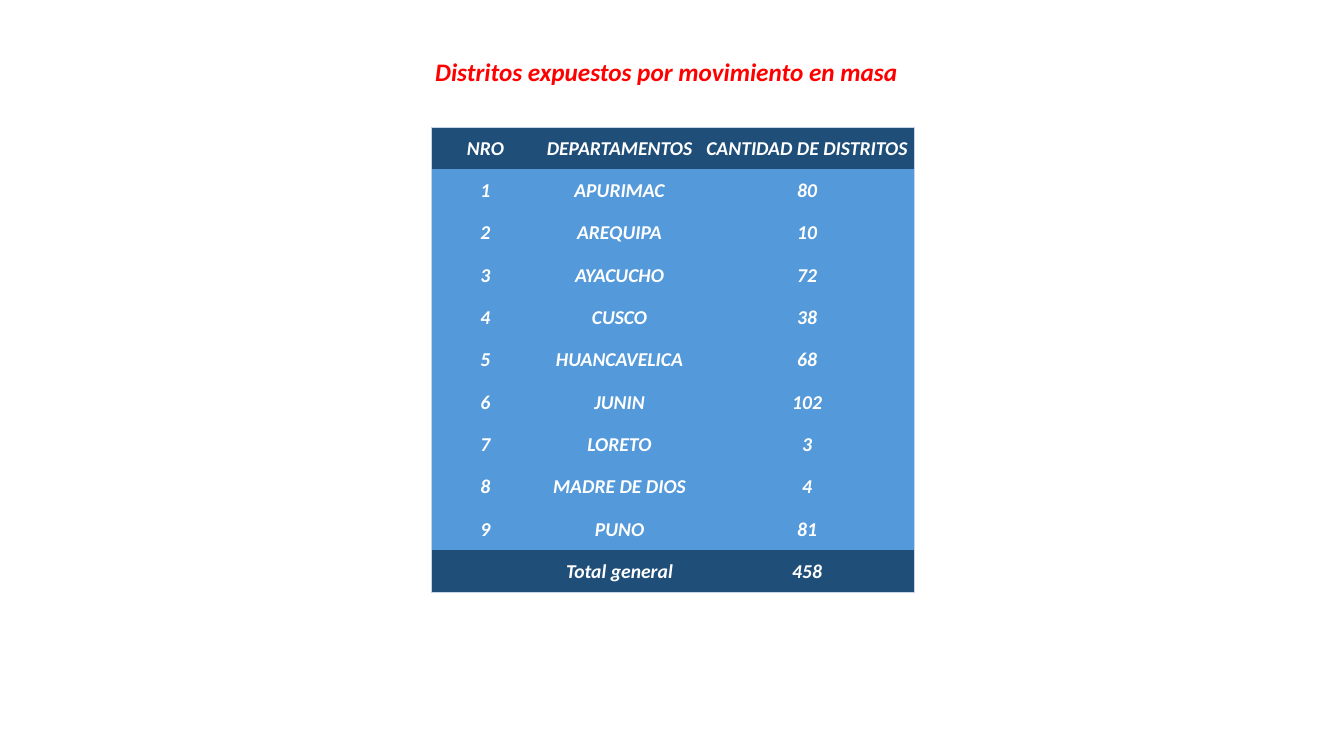
from dataclasses import dataclass

from lxml.etree import SubElement as Sub
from pptx import Presentation
from pptx.dml.color import RGBColor as Rgb
from pptx.enum.text import MSO_ANCHOR as Anchor, PP_ALIGN as Align
from pptx.oxml.ns import qn
from pptx.util import Pt

SCALE = 9144  # EMU in one px, at 100 px to the inch


@dataclass(frozen=True)
class Theme:
    font: str = "Calibri"
    title: str = "FF0000"
    ink: str = "FFFFFF"
    dark: str = "1F4E79"
    body: str = "5499DA"
    edge: str = "C4D5EB"
    big: int = 18
    small: int = 14
    line: float = 0.5


HEAD = ("NRO", "DEPARTAMENTOS", "CANTIDAD DE DISTRITOS")
COUNTS = {
    "APURIMAC": 80,
    "AREQUIPA": 10,
    "AYACUCHO": 72,
    "CUSCO": 38,
    "HUANCAVELICA": 68,
    "JUNIN": 102,
    "LORETO": 3,
    "MADRE DE DIOS": 4,
    "PUNO": 81,
}


def px(n):
    return n * SCALE


def write(frame, text, *, font, size, color, align=Align.CENTER):
    par = frame.paragraphs[0]
    par.alignment = align
    run = par.add_run()
    run.text = text
    face = run.font
    face.name, face.size = font, Pt(size)
    face.bold = face.italic = True
    face.color.rgb = Rgb.from_string(color)


def border(cell, sides, color, width):
    """Draw the named sides of a cell and clear the others."""
    props = cell._tc.get_or_add_tcPr()
    for side in "LRTB":
        line = Sub(props, qn(f"a:ln{side}"), w=str(Pt(width)))
        if side in sides:
            fill = Sub(line, qn("a:solidFill"))
            Sub(fill, qn("a:srgbClr"), val=color)
        else:
            Sub(line, qn("a:noFill"))


class Page:
    def __init__(self, slide, theme):
        self.slide, self.theme = slide, theme

    def title(self, text, left, top, width, height):
        look = self.theme
        box = self.slide.shapes.add_textbox(*map(px, (left, top, width, height)))
        box.text_frame.word_wrap = False
        write(box.text_frame, text, font=look.font, size=look.big, color=look.title)

    def table(self, rows, left, top, widths, height):
        """Place a table whose first and last rows are dark."""
        shape = self.slide.shapes.add_table(
            len(rows), len(widths), px(left), px(top),
            px(sum(widths)), px(height * len(rows)))
        grid = shape.table
        grid.first_row = grid.horz_banding = False
        for col, width in zip(grid.columns, widths):
            col.width = px(width)
        last, end = len(rows) - 1, len(widths) - 1
        for r, row in enumerate(rows):
            grid.rows[r].height = px(height)
            for c, text in enumerate(row):
                edges = {"L": c == 0, "R": c == end, "T": r == 0, "B": r == last}
                sides = [side for side, outer in edges.items() if outer]
                self.cell(grid.cell(r, c), text, sides, r in (0, last))

    def cell(self, cell, text, sides, dark):
        look = self.theme
        border(cell, sides, look.edge, look.line)
        cell.fill.solid()
        cell.fill.fore_color.rgb = Rgb.from_string(look.dark if dark else look.body)
        cell.vertical_anchor = Anchor.MIDDLE
        cell.margin_left = cell.margin_right = cell.margin_top = px(1)
        cell.margin_bottom = 0
        if text:
            write(cell.text_frame, text, font=look.font, size=look.small, color=look.ink)


def main():
    deck = Presentation()
    deck.slide_width, deck.slide_height = px(1333), px(750)
    page = Page(deck.slides.add_slide(deck.slide_layouts[6]), Theme())
    page.title("Distritos expuestos por movimiento en masa", 416, 51, 490, 40)
    body = [(str(n), name, str(count))
            for n, (name, count) in enumerate(COUNTS.items(), 1)]
    total = ("", "Total general", str(sum(COUNTS.values())))
    page.table([HEAD, *body, total], 428, 126, (107, 159, 213), 42)
    deck.save("out.pptx")


if __name__ == "__main__":
    main()
